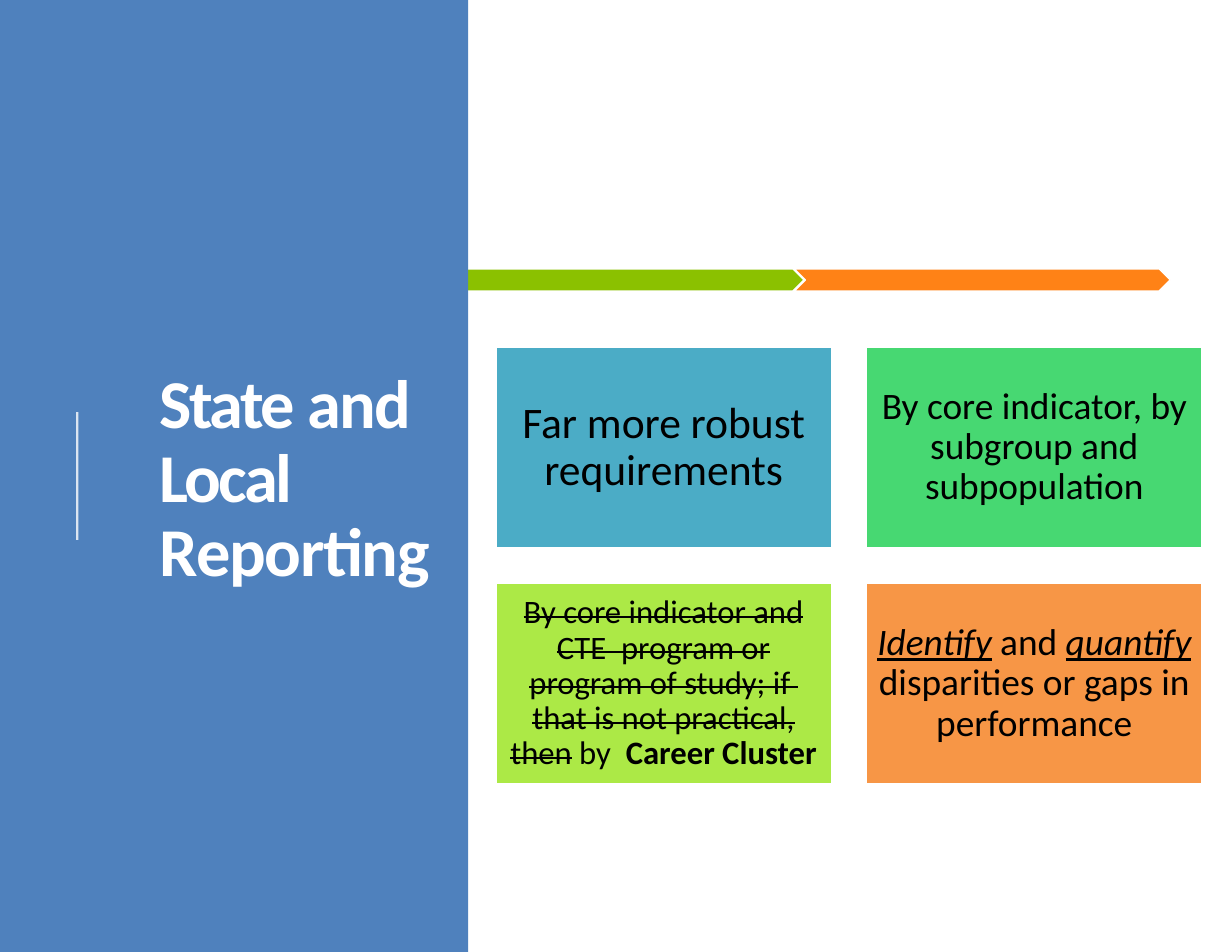
from dataclasses import dataclass

from lxml.etree import SubElement
from pptx import Presentation
from pptx.dml.color import RGBColor
from pptx.enum.shapes import MSO_CONNECTOR as Wire, MSO_SHAPE as Shape
from pptx.enum.text import MSO_ANCHOR as Anchor, PP_ALIGN as Align
from pptx.oxml.ns import qn
from pptx.util import Inches, Pt


@dataclass(frozen=True)
class Theme:
    font: str = "Calibri"
    white: str = "FFFFFF"
    black: str = "000000"
    blue: str = "4F81BD"
    lime: str = "8BC100"
    orange: str = "FF8216"
    teal: str = "4BACC6"
    mint: str = "47D872"
    grass: str = "ACE946"
    peach: str = "F79646"
    title: int = 44
    large: int = 28
    body: int = 24
    small: int = 21


THEME = Theme()


def rgb(code):
    return RGBColor.from_string(code)


def add_block(slide, kind, box, fill, edge=None):
    """Add a filled shape; edge is the width of its white outline in points."""
    shape = slide.shapes.add_shape(kind, *map(Inches, box))
    shape.shadow.inherit = False
    shape.fill.solid()
    shape.fill.fore_color.rgb = rgb(fill)
    if edge:
        shape.line.color.rgb = rgb(THEME.white)
        shape.line.width = Pt(edge)
    else:
        shape.line.fill.background()
    return shape


def set_frame(frame, inset):
    frame.word_wrap = True
    frame.vertical_anchor = Anchor.MIDDLE
    frame.margin_left = frame.margin_right = Inches(inset)
    frame.margin_top = frame.margin_bottom = Inches(inset)


def set_font(para, size, color):
    para.line_spacing = 0.9
    para.font.name = THEME.font
    para.font.size = Pt(size)
    para.font.color.rgb = rgb(color)


def add_arrows(slide, box):
    """Fill the box with two chevrons, the second nested into the first."""
    left, top, width, height = box
    step = 3.27
    for col, fill in enumerate((THEME.lime, THEME.orange)):
        spot = (left + col * step, top, width - step, height)
        add_block(slide, Shape.CHEVRON, spot, fill, edge=1)


def add_panel(slide, box):
    left, top, width, height = box
    add_block(slide, Shape.RECTANGLE, box, THEME.blue)

    spot = (left + 0.85, top + 0.88, width - 0.85, 6.82)
    frame = slide.shapes.add_textbox(*map(Inches, spot)).text_frame
    set_frame(frame, 0.1)
    para = frame.paragraphs[0]
    para._p.get_or_add_pPr().set("marL", str(Inches(0.48)))
    set_font(para, THEME.title, THEME.white)
    para.font.bold = True
    words = (("State ", -1.8), ("and ", -1), ("Local ", -1.8), ("Reporting", -0.8))
    for text, gap in words:
        run = para.add_run()
        run.text = text
        run._r.get_or_add_rPr().set("spc", str(round(gap * 100)))

    x = Inches(left + 0.69)
    rule = slide.shapes.add_connector(
        Wire.STRAIGHT, x, Inches(top + 4.82), x, Inches(top + 3.68))
    rule.line.color.rgb = rgb(THEME.white)
    rule.line.width = Pt(1.5)
    tint = rule._element.spPr.find(".//" + qn("a:srgbClr"))
    SubElement(tint, qn("a:alpha")).set("val", "80000")
    SubElement(rule._element.spPr, qn("a:effectLst"))


def add_card(slide, box, fill, size, inset, runs):
    """Add a centred card; each run is its text and a string of style marks."""
    frame = add_block(slide, Shape.RECTANGLE, box, fill, edge=2).text_frame
    set_frame(frame, inset)
    para = frame.paragraphs[0]
    para.alignment = Align.CENTER
    set_font(para, size, THEME.black)
    for text, marks in runs:
        run = para.add_run()
        run.text = text
        if "b" in marks:
            run.font.bold = True
        if "i" in marks:
            run.font.italic = True
        if "u" in marks:
            run.font.underline = True
        if "s" in marks:
            run._r.get_or_add_rPr().set("strike", "sngStrike")


def add_cards(slide, box):
    left, top, width, height = box
    gap = 0.3
    wide, high = (width - gap) / 2, (height - gap) / 2
    cards = (
        (THEME.teal, THEME.large, 0.12, [("Far more robust requirements", "")]),
        (THEME.mint, THEME.body, 0.1,
         [("By core indicator, by subgroup and subpopulation", "")]),
        (THEME.grass, THEME.small, 0.09,
         [("By core indicator and CTE  program or program of study; "
           "if  that is not practical, then", "s"),
          (" by  ", ""), ("Career Cluster", "b")]),
        (THEME.peach, THEME.body, 0.1,
         [("Identify", "iu"), (" and ", ""), ("quantify", "iu"),
          (" disparities or gaps in performance", "")]),
    )
    for i, card in enumerate(cards):
        row, col = divmod(i, 2)
        spot = (left + col * (wide + gap), top + row * (high + gap), wide, high)
        add_card(slide, spot, *card)


def main():
    deck = Presentation()
    deck.slide_width, deck.slide_height = Inches(11), Inches(8.5)
    slide = deck.slides.add_slide(deck.slide_layouts[6])
    add_arrows(slide, (3.82, 2.4, 6.63, 0.2))
    add_panel(slide, (0, 0, 4.18, 8.5))
    add_cards(slide, (4.42, 3.09, 6.32, 3.92))
    deck.save("out.pptx")


if __name__ == "__main__":
    main()
